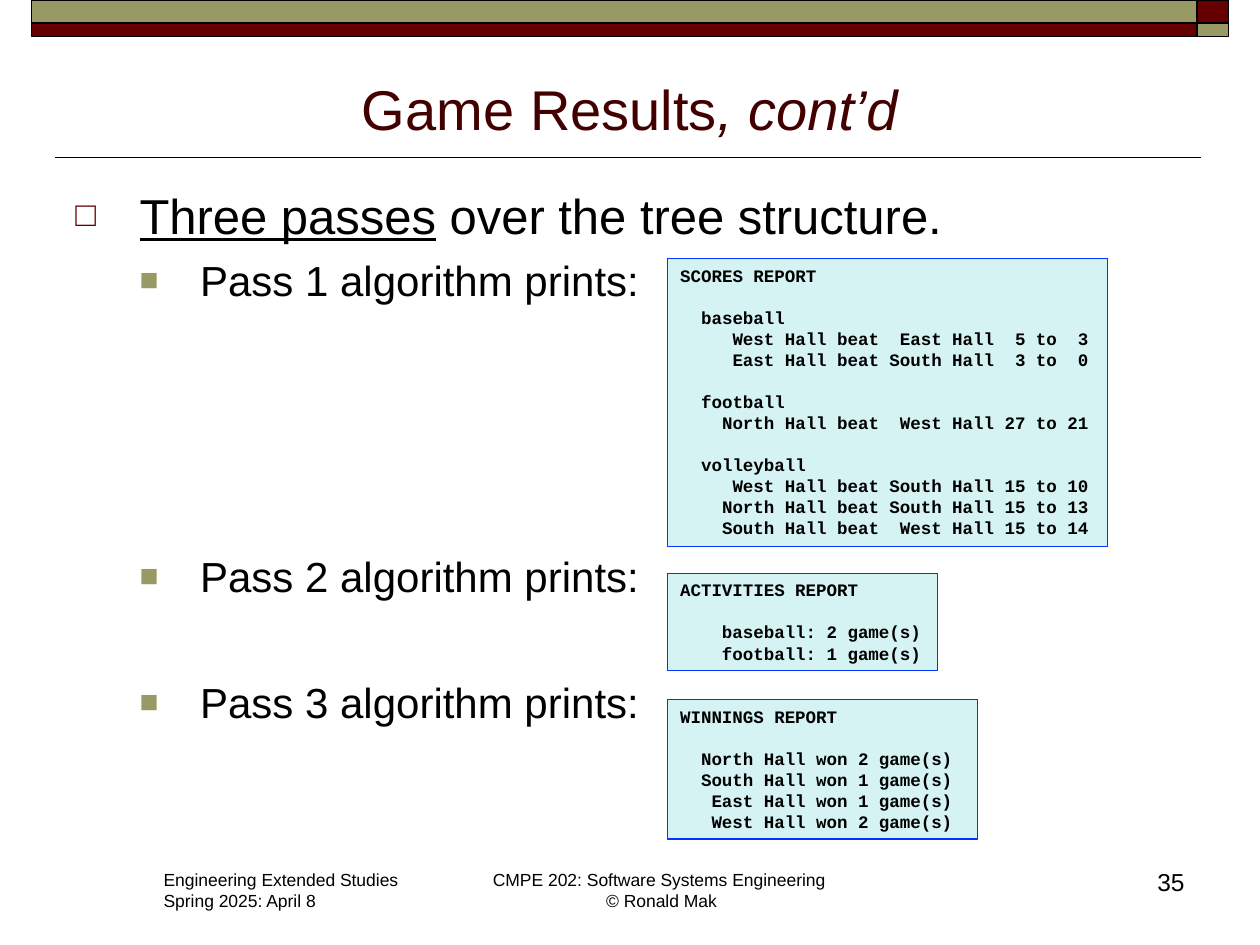
from lxml import etree
from pptx import Presentation
from pptx import util as u
from pptx.dml.color import RGBColor
from pptx.enum import shapes, text
from pptx.oxml import ns

MAROON = RGBColor(0x66, 0x00, 0x00)
OLIVE = RGBColor(0x99, 0x99, 0x66)
TITLE_BROWN = RGBColor(0x42, 0x00, 0x00)
REPORT_FILL = RGBColor(0xD6, 0xF3, 0xF4)
REPORT_EDGE = RGBColor(0x04, 0x32, 0xFF)
BLACK = RGBColor(0, 0, 0)

LEFT, CENTER, RIGHT = (text.PP_ALIGN.LEFT, text.PP_ALIGN.CENTER,
                       text.PP_ALIGN.RIGHT)

SCORES = """SCORES REPORT

  baseball
     West Hall beat  East Hall  5 to  3
     East Hall beat South Hall  3 to  0

  football
    North Hall beat  West Hall 27 to 21

  volleyball
     West Hall beat South Hall 15 to 10
    North Hall beat South Hall 15 to 13
    South Hall beat  West Hall 15 to 14"""

ACTIVITIES = """ACTIVITIES REPORT

    baseball: 2 game(s)
    football: 1 game(s)"""

WINNINGS = """WINNINGS REPORT

  North Hall won 2 game(s)
  South Hall won 1 game(s)
   East Hall won 1 game(s)
   West Hall won 2 game(s)"""


class Deck:
    """Draws on a grid of 40 columns by 30 rows."""
    FONT, CODE_FONT = "Arial", "Courier New"

    def __init__(self):
        self.prs = Presentation()
        self.prs.slide_width, self.prs.slide_height = u.Inches(10), u.Inches(7.5)
        self.slide = self.prs.slides.add_slide(self.prs.slide_layouts[6])

    def place(self, *cells):
        """Turn alternating columns and rows into lengths."""
        sizes = (self.prs.slide_width / 40, self.prs.slide_height / 30)
        return [u.Emu(round(n * sizes[i % 2])) for i, n in enumerate(cells)]

    def rect(self, cells, fill, edge=BLACK, width=1):
        box = self.slide.shapes.add_shape(shapes.MSO_SHAPE.RECTANGLE,
                                          *self.place(*cells))
        box.shadow.inherit = False
        box.fill.solid()
        box.fill.fore_color.rgb = fill
        box.line.color.rgb = edge
        box.line.width = u.Pt(width)
        return box

    def rule(self, *ends):
        line = self.slide.shapes.add_connector(
            shapes.MSO_CONNECTOR.STRAIGHT, *self.place(*ends))
        line.line.color.rgb = BLACK
        line.line.width = u.Pt(1)
        etree.SubElement(line._element.spPr, ns.qn("a:effectLst"))

    def frame(self, cells, wrap=True, anchor=text.MSO_ANCHOR.TOP):
        frame = self.slide.shapes.add_textbox(*self.place(*cells)).text_frame
        frame.word_wrap, frame.vertical_anchor = wrap, anchor
        return frame

    def paragraph(self, frame, runs, size, color=BLACK, align=LEFT, name=FONT,
                  bold=None, before=0, bullet=None):
        """Fill the empty first paragraph, or add one; return its runs."""
        para = frame.paragraphs[0]
        if para.runs:
            para = frame.add_paragraph()
            para.space_before = u.Pt(before)
        para.alignment = align
        if bullet:
            self.bullet(para, *bullet)
        para.font.size, para.font.name = u.Pt(size), name
        para.font.color.rgb, para.font.bold = color, bold
        for words in runs:
            para.add_run().text = words
        return para.runs

    def bullet(self, para, char, color, percent, margin, hang):
        props = para._p.get_or_add_pPr()
        props.set("marL", str(u.Inches(margin)))
        props.set("indent", str(-u.Inches(hang)))
        tint = etree.SubElement(props, ns.qn("a:buClr"))
        etree.SubElement(tint, ns.qn("a:srgbClr"), val=str(color))
        etree.SubElement(props, ns.qn("a:buSzPct"), val=str(percent * 1000))
        etree.SubElement(props, ns.qn("a:buFont"), typeface=self.FONT)
        etree.SubElement(props, ns.qn("a:buChar"), char=char)

    def lines(self, cells, words, size, align=LEFT, wrap=False):
        frame = self.frame(cells, wrap)
        for line in words:
            self.paragraph(frame, [line], size, align=align)

    def report(self, cells, listing):
        frame = self.rect(cells, REPORT_FILL, REPORT_EDGE, 0.75).text_frame
        frame.word_wrap, frame.vertical_anchor = False, text.MSO_ANCHOR.TOP
        for section in listing.split("\n\n"):
            for i, line in enumerate(section.split("\n")):
                self.paragraph(frame, [line], 10, name=self.CODE_FONT,
                               bold=True, before=0 if i else 12)


def main():
    deck = Deck()

    # Banner and title rule
    for left, width, colors in ((1, 37, (OLIVE, MAROON)),
                                (38, 1, (MAROON, OLIVE))):
        for (top, height), color in zip(((0, 0.72), (0.72, 0.44)), colors):
            deck.rect((left, top, width, height), color)
    deck.rule(1.76, 5, 38.12, 5)

    # Title
    title = deck.frame((2, 1.8, 36, 2.88), anchor=text.MSO_ANCHOR.BOTTOM)
    runs = deck.paragraph(title, ["Game Results", ", cont’d"], 32,
                          TITLE_BROWN, CENTER)
    runs[1].font.italic = True

    # The three passes, spaced to sit beside their reports
    passes = deck.frame((2, 5.68, 29.04, 18.12))
    runs = deck.paragraph(passes, ["Three passes", " over the tree structure."],
                          28, bullet=("□", MAROON, 70, 0.51, 0.51))
    runs[0].font.underline = True
    for number, gap in enumerate((6, 140.4, 43.3), start=1):
        deck.paragraph(passes, [f"Pass {number} algorithm prints:"], 24,
                       before=gap, bullet=("■", OLIVE, 75, 0.99, 0.48))

    # Reports
    for top, width, height, listing in ((8.2, 13.96, 9.16, SCORES),
                                        (18.2, 8.56, 3.08, ACTIVITIES),
                                        (22.2, 9.84, 4.44, WINNINGS)):
        deck.report((21.2, top, width, height), listing)

    # Footer
    deck.lines((4.8, 27.4, 8.28, 1.76),
               ["Engineering Extended Studies", "Spring 2025: April 8"], 10)
    deck.lines((15.2, 27.4, 11.6, 1.76),
               ["CMPE 202: Software Systems Engineering ", "© Ronald Mak"],
               10, CENTER)
    deck.lines((34.8, 27.32, 3.2, 2), ["35"], 14, RIGHT, wrap=True)

    deck.prs.save("out.pptx")


if __name__ == "__main__":
    main()
